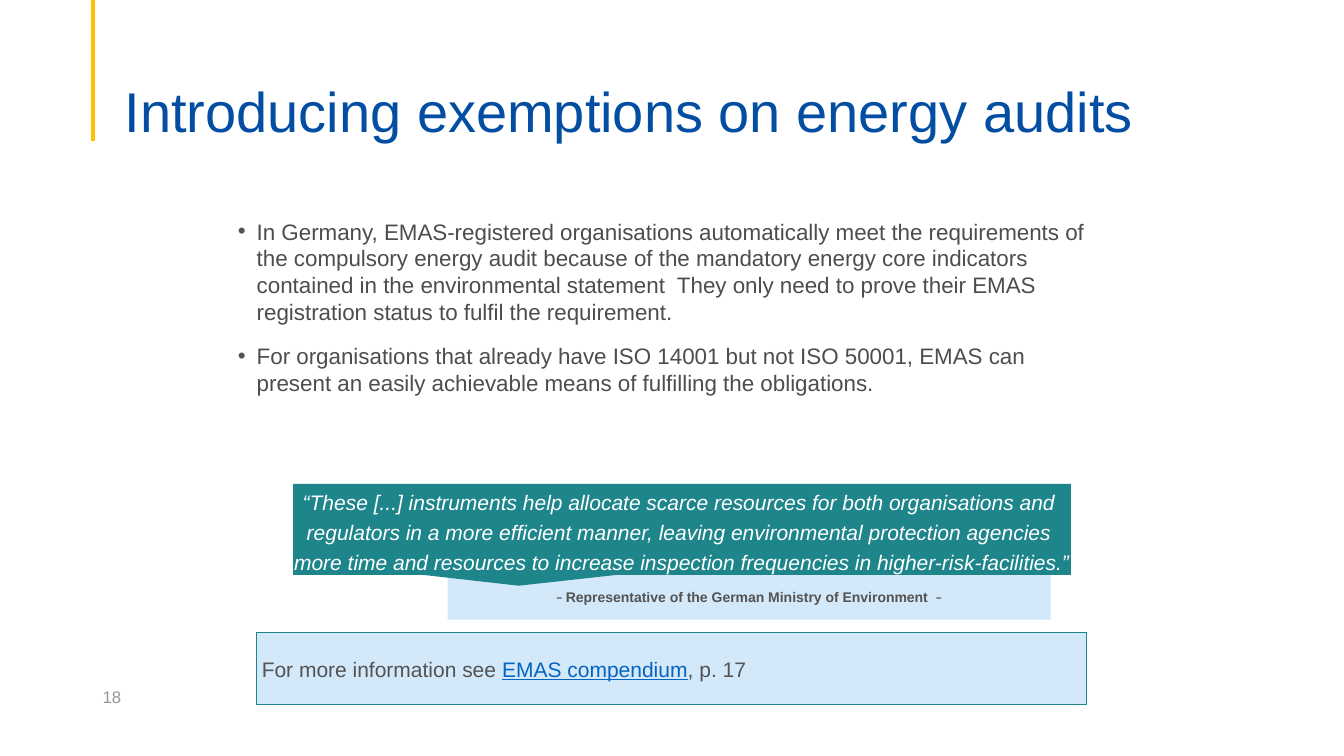
from lxml import etree
from pptx import Presentation
from pptx.dml.color import RGBColor
from pptx.enum.shapes import MSO_CONNECTOR, MSO_SHAPE
from pptx.enum.text import MSO_ANCHOR, PP_ALIGN
from pptx.oxml.ns import qn
from pptx.util import Pt

RECT = MSO_SHAPE.RECTANGLE
CALLOUT = MSO_SHAPE.RECTANGULAR_CALLOUT
STRAIGHT = MSO_CONNECTOR.STRAIGHT
TOP, MIDDLE, BOTTOM = MSO_ANCHOR.TOP, MSO_ANCHOR.MIDDLE, MSO_ANCHOR.BOTTOM
LEFT, CENTER = PP_ALIGN.LEFT, PP_ALIGN.CENTER

BLUE = RGBColor(0x03, 0x4E, 0xA2)
GOLD = RGBColor(0xFF, 0xC0, 0x00)
TEAL = RGBColor(0x1E, 0x85, 0x8B)
PALE = RGBColor(0xD3, 0xE8, 0xF9)
LINK = RGBColor(0x05, 0x63, 0xC1)
DARK = RGBColor(0x4D, 0x4D, 0x4D)
GREY = RGBColor(0x53, 0x53, 0x53)
LIGHT = RGBColor(0x97, 0x97, 0x97)
WHITE = RGBColor(0xFF, 0xFF, 0xFF)

TITLE = ["Introducing exemptions on energy audits"]
POINTS = [
    "In Germany, EMAS-registered organisations automatically meet the requirements of the compulsory energy audit because of the mandatory energy core indicators contained in the environmental statement  They only need to prove their EMAS registration status to fulfil the requirement.",
    "For organisations that already have ISO 14001 but not ISO 50001, EMAS can present an easily achievable means of fulfilling the obligations.",
]
QUOTE = [
    "“These [...] instruments help allocate scarce resources for both organisations and ",
    "regulators in a more efficient manner, leaving environmental protection agencies ",
    "more time and resources to increase inspection frequencies in higher-risk-facilities.”",
]
SOURCE = [("– ", "Representative of the German Ministry of Environment  ", "–")]
MORE = [("For more information see ", "EMAS compendium", ", p. 17")]
NUMBER = ["18"]

deck = Presentation()
deck.slide_width, deck.slide_height = Pt(960), Pt(540)
slide = deck.slides.add_slide(deck.slide_layouts[6])
shapes = slide.shapes


def write(shape, lines, size, color, anchor=MIDDLE, align=LEFT,
          pad=(3.6, 3.6, 3.6, 3.6), wrap=True):
    frame = shape.text_frame
    frame.word_wrap = wrap
    frame.vertical_anchor = anchor
    (frame.margin_left, frame.margin_top,
     frame.margin_right, frame.margin_bottom) = map(Pt, pad)
    for i, line in enumerate(lines):
        para = frame.paragraphs[0] if i == 0 else frame.add_paragraph()
        para.alignment = align
        for part in [line] if isinstance(line, str) else line:
            para.add_run().text = part
        para.font.name = "Arial"
        para.font.size = Pt(size)
        para.font.color.rgb = color
    return frame.paragraphs


def text(box, *args, **opts):
    return write(shapes.add_textbox(*map(Pt, box)), *args, **opts)


def panel(kind, box, fill, edge=None):
    shape = shapes.add_shape(kind, *map(Pt, box))
    shape.shadow.inherit = False
    shape.fill.solid()
    shape.fill.fore_color.rgb = fill
    if edge is None:
        shape.line.fill.background()
    else:
        shape.line.color.rgb = edge
        shape.line.width = Pt(0.5)
    return shape


def bullet(para, color):
    props = para._p.get_or_add_pPr()
    props.set("marL", str(Pt(13.5)))
    props.set("indent", str(-Pt(13.5)))
    tint = etree.SubElement(props, qn("a:buClr"))
    etree.SubElement(tint, qn("a:srgbClr"), val=str(color))
    etree.SubElement(props, qn("a:buFont"), typeface="Arial")
    etree.SubElement(props, qn("a:buChar"), char="•")


rule = shapes.add_connector(STRAIGHT, Pt(66.4), Pt(0), Pt(66.4), Pt(100.8))
rule.line.color.rgb = GOLD
rule.line.width = Pt(2.25)
etree.SubElement(rule._element.spPr, qn("a:effectLst"))

title = text((82, 41, 828, 62), TITLE, 40, BLUE, BOTTOM, pad=(7.2, 3.6, 7.2, 0))
title[0].line_spacing = 0.9

more = write(panel(RECT, (183.4, 452, 592.6, 51.2), PALE, TEAL), MORE, 15, GREY)
link = more[0].runs[1].font
link.color.rgb = LINK
link.underline = True

body = shapes.add_textbox(Pt(167), Pt(152), Pt(625.7), Pt(175.7))
for para in body.text_frame.paragraphs:
    bullet(para, GREY)
second = body.text_frame.add_paragraph()
bullet(second, GREY)
second.space_before = Pt(12)
body.text_frame.word_wrap = True
body.text_frame.vertical_anchor = TOP
body.text_frame.margin_left = body.text_frame.margin_right = Pt(2.9)
for para, point in zip(body.text_frame.paragraphs, POINTS):
    para.add_run().text = point
    para.font.name = "Arial"
    para.font.size = Pt(16)
    para.font.color.rgb = DARK

source = write(panel(RECT, (319.7, 410.4, 430.8, 32.2), PALE),
               SOURCE, 10, GREY, align=CENTER)
source[0].font.bold = True
for dash in source[0].runs[::2]:
    dash.font.name = "Calibri"

callout = panel(CALLOUT, (209.4, 345.7, 555.6, 64.9), TEAL)
callout.adjustments[0] = -0.21
callout.adjustments[1] = 0.62
for para in write(callout, QUOTE, 15, WHITE, align=CENTER,
                  pad=(28, 3.6, 28, 3.6), wrap=False):
    para.line_spacing = 1.2
    para.font.italic = True

text((66.2, 483, 216, 28.8), NUMBER, 12, LIGHT, pad=(7.2, 3.6, 7.2, 3.6))

deck.save("out.pptx")
